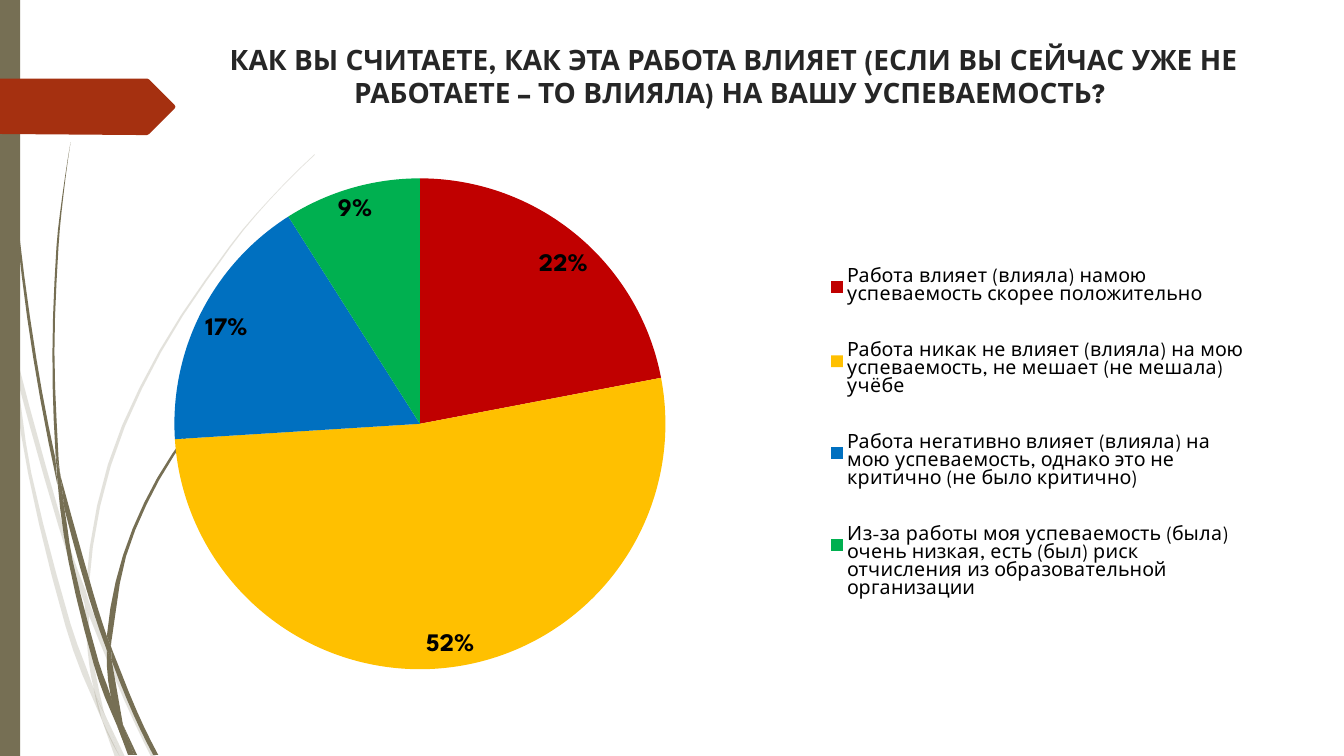
import math

from lxml import etree
from pptx import Presentation
from pptx.chart.data import CategoryChartData
from pptx.dml.color import RGBColor
from pptx.enum.chart import XL_CHART_TYPE, XL_LABEL_POSITION, XL_LEGEND_POSITION
from pptx.enum.shapes import MSO_SHAPE
from pptx.enum.text import MSO_ANCHOR, PP_ALIGN
from pptx.oxml.ns import qn
from pptx.util import Pt

PX = 9144  # one hundredth of an inch in EMU
PIE = XL_CHART_TYPE.PIE
BEST_FIT = XL_LABEL_POSITION.BEST_FIT
RIGHT = XL_LEGEND_POSITION.RIGHT
RECTANGLE = MSO_SHAPE.RECTANGLE
TOP = MSO_ANCHOR.TOP
CENTER = PP_ALIGN.CENTER

FONT = "League Spartan"
OLIVE = "766F54"
RUST = "A53010"
CHART_WIDTH, CHART_HEIGHT = 1200, 592
TITLE = ("КАК ВЫ СЧИТАЕТЕ, КАК ЭТА РАБОТА ВЛИЯЕТ (ЕСЛИ ВЫ СЕЙЧАС УЖЕ НЕ "
         "РАБОТАЕТЕ – ТО ВЛИЯЛА) НА ВАШУ УСПЕВАЕМОСТЬ? ")
ANSWERS = [
    ("Работа влияет (влияла) намою успеваемость скорее положительно", 22, "C00000"),
    ("Работа никак не влияет (влияла) на мою успеваемость, не мешает (не мешала) учёбе",
     52, "FFC000"),
    ("Работа негативно влияет (влияла) на мою успеваемость, однако это не критично "
     "(не было критично)", 17, "0070C0"),
    ("Из-за работы моя успеваемость (была) очень низкая, есть (был) риск отчисления "
     "из образовательной организации", 9, "00B050"),
]

# Each blade of grass is two smooth edges, down one side and back along the other.
PALE_BLADES = [
    ([(11, 350), (9, 322), (0, 282)], [(0, 299), (10, 344)]),
    ([(14, 345), (62, 520), (85, 586)], [(84, 599), (58, 522), (17, 376)]),
    ([(88, 596), (92, 607), (127, 692), (155, 751)], [(150, 751), (123, 694), (88, 610)]),
    ([(105, 711), (124, 751)], [(119, 751)]),
    ([(11, 350), (17, 376), (31, 469), (70, 619), (93, 683), (101, 714)],
     [(92, 693), (65, 621), (28, 470), (11, 350)]),
    ([(84, 599), (87, 646), (93, 683), (105, 711)], [(103, 706), (91, 646), (88, 610)]),
    ([(85, 586), (107, 461), (158, 348), (228, 244), (268, 197), (312, 153)],
     [(312, 154), (268, 198), (229, 245), (160, 349), (110, 462), (88, 584)]),
    ([(101, 714), (114, 751)], [(119, 751)]),
    ([(84, 599), (85, 586)], [(88, 596), (88, 610)]),
    ([(93, 683), (101, 714), (119, 751)], [(105, 711), (96, 692)]),
]
DARK_BLADES = [
    ([(3, 0), (3, 48), (7, 110), (17, 233), (33, 355), (57, 481)],
     [(55, 455), (36, 355), (19, 232), (8, 109), (5, 48), (3, 0)]),
    ([(60, 472), (93, 590), (106, 631)], [(106, 645), (88, 592), (64, 505)]),
    ([(110, 641), (113, 649), (136, 706), (157, 749)], [(152, 749), (132, 708), (111, 656)]),
    ([(57, 477), (64, 505), (72, 556), (98, 657), (110, 691), (117, 722)],
     [(111, 708), (93, 659), (68, 557), (57, 477)]),
    ([(70, 141), (62, 193), (56, 245), (52, 349), (55, 449)],
     [(60, 472), (58, 453), (54, 349), (58, 245), (63, 193), (70, 141)]),
    ([(122, 719), (136, 749)], [(133, 749)]),
    ([(57, 477), (55, 449)], [(60, 472), (64, 505)]),
    ([(106, 631), (122, 551), (156, 474), (204, 405), (231, 373), (260, 344)],
     [(261, 344), (231, 374), (205, 406), (158, 476), (125, 552), (111, 633), (110, 641)]),
    ([(117, 722), (131, 749)], [(127, 749)]),
    ([(106, 645), (110, 691), (122, 719)], [(111, 656), (109, 651)]),
    ([(106, 631), (106, 645)], [(111, 656), (110, 641)]),
    ([(110, 691), (117, 722), (130, 749)], [(133, 749), (122, 719), (116, 706)]),
]
ARROW = [(-1, 78), (146, 78), (148, 79), (173, 104), (174, 106), (173, 108),
         (148, 133), (146, 134), (136, 134), (-1, 133)]


def px(*lengths):
    return [round(length * PX) for length in lengths]


def colour(hex_text):
    return RGBColor.from_string(hex_text)


def paint(shape, hex_text, opacity=100):
    """Flat fill without line or shadow; opacity in percent."""
    shape.shadow.inherit = False
    shape.line.fill.background()
    shape.fill.solid()
    shape.fill.fore_color.rgb = colour(hex_text)
    if opacity < 100:
        tint = shape.fill._xPr.find(qn("a:solidFill"))[0]
        etree.SubElement(tint, qn("a:alpha"), val=str(opacity * 1000))


def direction(start, end):
    length = math.dist(start, end)
    return [(b - a) / length for a, b in zip(start, end)]


def smooth(edge, steps=3):
    """Points of a curve that runs through every anchor of the edge."""
    if len(edge) < 3:
        return edge
    inner = [direction(a, b) for a, b in zip(edge, edge[2:])]
    first = [2 * d - m for d, m in zip(direction(*edge[:2]), inner[0])]
    last = [2 * d - m for d, m in zip(direction(*edge[-2:]), inner[-1])]
    tangents = [first, *inner, last]
    points = [edge[0]]
    for i, (start, end) in enumerate(zip(edge, edge[1:])):
        length = math.dist(start, end)
        for step in range(1, steps + 1):
            t = step / steps
            blend = 3 * t**2 - 2 * t**3
            lead, trail = length * t * (1 - t)**2, length * t**2 * (t - 1)
            points.append([
                (1 - blend) * start[k] + blend * end[k]
                + lead * tangents[i][k] + trail * tangents[i + 1][k]
                for k in (0, 1)])
    return points


def add_outline(page, points, hex_text, opacity=100):
    corners = [px(*point) for point in points]
    builder = page.shapes.build_freeform(*corners[0])
    builder.add_line_segments(corners[1:], close=True)
    paint(builder.convert_to_shape(), hex_text, opacity)


def add_blades(page, blades, opacity):
    for outward, back in blades:
        add_outline(page, smooth(outward) + smooth(back), OLIVE, opacity)


def set_font(font, size, hex_text, bold):
    font.name = FONT
    font.size = Pt(size)
    font.bold = bold
    font.color.rgb = colour(hex_text)


def add_title(page):
    box = page.shapes.add_textbox(*px(171, 37, 1113, 103))
    frame = box.text_frame
    frame.word_wrap = True
    frame.vertical_anchor = TOP
    para = frame.paragraphs[0]
    para.alignment = CENTER
    span = para.add_run()
    span.text = TITLE
    set_font(span.font, 20, "262626", True)


def place(part, index, x, y, w, h, inner=False):
    """Give a chart part a fixed place, in px from the chart's corner."""
    for old in part.findall(qn("c:layout")):
        part.remove(old)
    layout = etree.Element(qn("c:layout"))
    manual = etree.SubElement(layout, qn("c:manualLayout"))
    if inner:
        etree.SubElement(manual, qn("c:layoutTarget"), val="inner")
    for side in "xy":
        etree.SubElement(manual, qn(f"c:{side}Mode"), val="edge")
    fractions = (x / CHART_WIDTH, y / CHART_HEIGHT, w / CHART_WIDTH, h / CHART_HEIGHT)
    for name, value in zip("xywh", fractions):
        etree.SubElement(manual, qn(f"c:{name}"), val=str(value))
    part.insert(index, layout)


def add_answer_pie(page):
    names, shares, colours = zip(*ANSWERS)
    chart_data = CategoryChartData()
    chart_data.categories = names
    chart_data.add_series("Series 1", shares)
    area = px(102, 139, CHART_WIDTH, CHART_HEIGHT)
    chart = page.shapes.add_chart(PIE, *area, chart_data).chart
    chart.has_title = False
    set_font(chart.font, 18, "000000", False)

    plot = chart.plots[0]
    plot.vary_by_categories = True
    for index, hex_text in enumerate(colours):
        fill = plot.series[0].points[index].format.fill
        fill.solid()
        fill.fore_color.rgb = colour(hex_text)
    labels = plot.series[0].data_labels
    labels.show_value = False
    labels.show_percentage = True
    labels.position = BEST_FIT
    set_font(labels.font, 18, "000000", True)

    chart.has_legend = True
    chart.legend.position = RIGHT
    chart.legend.include_in_layout = False
    set_font(chart.legend.font, 14, "000000", False)
    place(chart.legend._element, 1, 715, 90, 424, 403)
    place(chart._chartSpace.chart.plotArea, 0, 71, 38, 487, 487, inner=True)


def main():
    deck = Presentation()
    deck.slide_width, deck.slide_height = px(1333, 750)
    page = deck.slides.add_slide(deck.slide_layouts[6])
    add_blades(page, PALE_BLADES, 20)
    add_blades(page, DARK_BLADES, 100)
    paint(page.shapes.add_shape(RECTANGLE, *px(0, 0, 20, 750)), OLIVE)
    add_outline(page, ARROW, RUST)
    add_title(page)
    add_answer_pie(page)
    deck.save("out.pptx")


if __name__ == "__main__":
    main()
